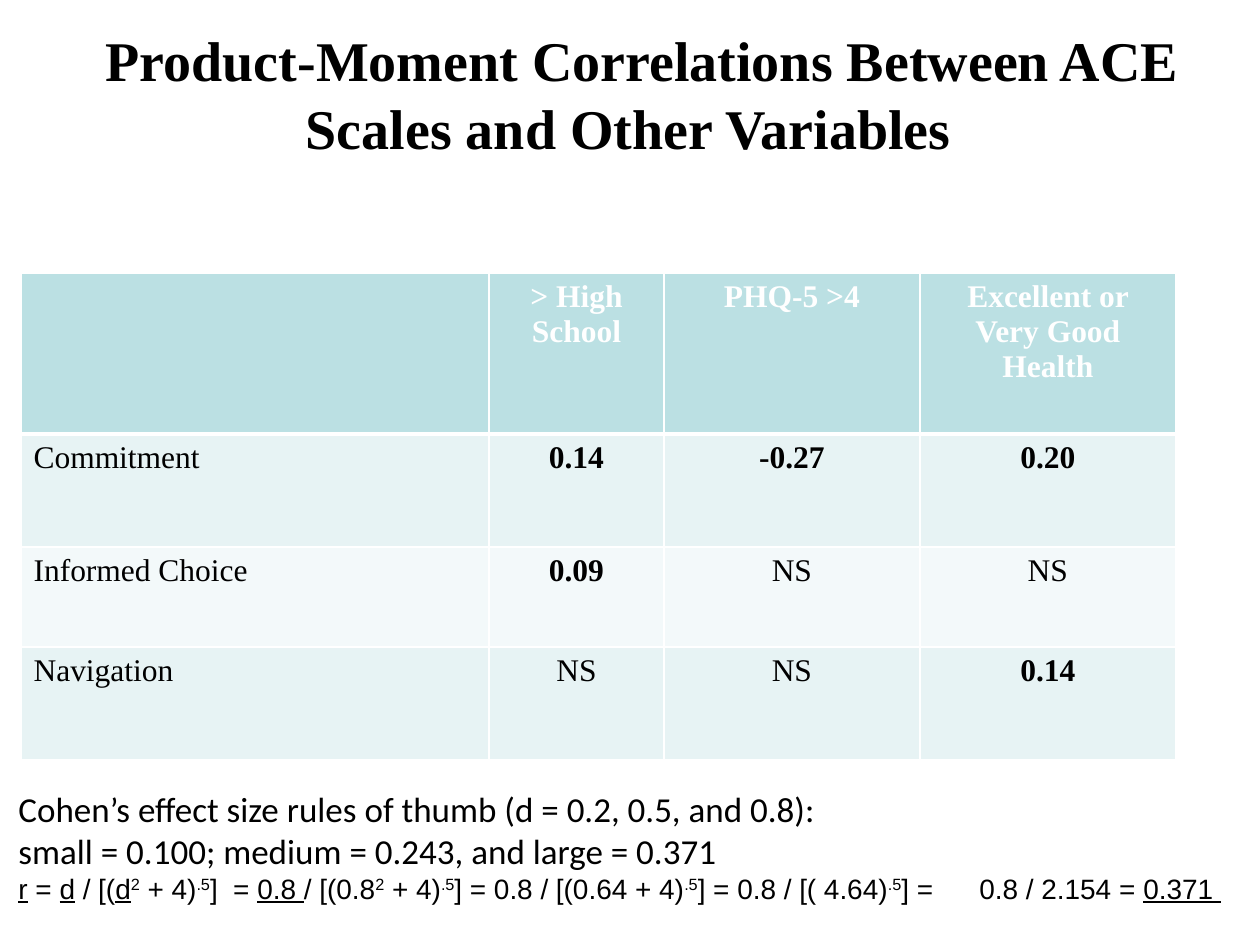
from dataclasses import dataclass

from lxml import etree
from pptx import Presentation
from pptx.dml.color import RGBColor
from pptx.enum.text import MSO_ANCHOR, PP_ALIGN
from pptx.oxml.ns import qn
from pptx.util import Emu, Pt

PX_PER_INCH = 126
LEFT, CENTER = PP_ALIGN.LEFT, PP_ALIGN.CENTER
TOP = MSO_ANCHOR.TOP
SERIF, SANS, BODY = "Times New Roman", "Arial", "Calibri"
COLORS = {
    "text": "000000",
    "white": "FFFFFF",
    "header": "BBE0E3",
    "band_dark": "E7F3F4",
    "band_light": "F3F9FA",
}


@dataclass
class Span:
    text: str
    underline: bool = False
    raised: bool = False


@dataclass
class Line:
    spans: list[Span]
    font: str
    size: int
    bold: bool = False
    align: PP_ALIGN = LEFT
    color: str = "text"
    tab: int = 0


@dataclass
class Box:
    x: int
    y: int
    w: int
    h: int
    inset_y: int
    lines: list[Line]


def px(n: int) -> Emu:
    return Emu(round(n * 914400 / PX_PER_INCH))


def rgb(name: str) -> RGBColor:
    return RGBColor.from_string(COLORS[name])


def write_line(p, line: Line) -> None:
    p.alignment = line.align
    p.font.name, p.font.size, p.font.bold = line.font, Pt(line.size), line.bold
    p.font.color.rgb = rgb(line.color)
    if line.tab:
        tabs = etree.Element(qn("a:tabLst"))
        etree.SubElement(tabs, qn("a:tab"), pos=str(px(line.tab)), algn="l")
        p._p.pPr.insert(0, tabs)
    for span in line.spans:
        r = p.add_run()
        r.text = span.text
        if span.underline:
            r.font.underline = True
        if span.raised:
            r._r.get_or_add_rPr().set("baseline", "30000")


def draw_box(slide, box: Box) -> None:
    sp = slide.shapes.add_textbox(px(box.x), px(box.y), px(box.w), px(box.h))
    tf = sp.text_frame
    tf.word_wrap = True
    tf.vertical_anchor = TOP
    tf.margin_top = tf.margin_bottom = px(box.inset_y)
    for i, line in enumerate(box.lines):
        write_line(tf.add_paragraph() if i else tf.paragraphs[0], line)


def set_border(cell, side: str, points: int) -> None:
    ln = etree.SubElement(cell._tc.get_or_add_tcPr(), qn(f"a:{side}"), w=str(Pt(points)))
    fill = etree.SubElement(ln, qn("a:solidFill"))
    etree.SubElement(fill, qn("a:srgbClr"), val=COLORS["white"])


def draw_table(slide, x: int, y: int, cols: list[int], heights: list[int],
               rows: list[list[str]]) -> None:
    table = slide.shapes.add_table(len(rows), len(cols), px(x), px(y),
                                   px(sum(cols)), px(sum(heights))).table
    table.horz_banding = False
    for column, width in zip(table.columns, cols):
        column.width = px(width)
    for i, (values, height) in enumerate(zip(rows, heights)):
        table.rows[i].height = px(height)
        is_header = i == 0
        band = "header" if is_header else "band_dark" if i % 2 else "band_light"
        for j, value in enumerate(values):
            cell = table.cell(i, j)
            # Significant correlations are bold
            bold = is_header or (j > 0 and value != "NS")
            write_line(cell.text_frame.paragraphs[0],
                       Line([Span(value)] if value else [], SERIF, 18, bold,
                            CENTER if j else LEFT, "white" if is_header else "text"))
            for side in ("lnL", "lnR", "lnT", "lnB"):
                thick = (is_header and side == "lnB") or (i == 1 and side == "lnT")
                set_border(cell, side, 3 if thick else 1)
            cell.fill.solid()
            cell.fill.fore_color.rgb = rgb(band)


TITLE = Box(21, 20, 1229, 149, 6, [
    Line([Span(" Product-Moment Correlations Between ACE Scales and Other Variables ")],
         SERIF, 32, True, CENTER),
])

CORRELATIONS = [
    ["", "> High School", "PHQ-5 >4", "Excellent or Very Good Health"],
    ["Commitment", "0.14", "-0.27", "0.20"],
    ["Informed Choice", "0.09", "NS", "NS"],
    ["Navigation", "NS", "NS", "0.14"],
]

SQUARED = Span("2", raised=True)
ROOT = Span(".5", raised=True)
FORMULA = [
    Span("r", underline=True), Span(" = "),
    Span("d", underline=True), Span(" / [("),
    Span("d", underline=True), SQUARED, Span(" + 4)"), ROOT, Span("]  = "),
    Span("0.8 ", underline=True), Span("/ [(0.8"), SQUARED, Span(" + 4)"), ROOT,
    Span("] = 0.8 / [(0.64 + 4)"), ROOT,
    Span("] = 0.8 / [( 4.64)"), ROOT,
    Span("] =\t0.8 / 2.154 = "), Span("0.371 ", underline=True),
]
EFFECT_SIZES = Box(6, 787, 1254, 122, 0, [
    Line([Span("Cohen’s effect size rules of thumb (d = 0.2, 0.5, and 0.8):")], BODY, 20),
    Line([Span("small = 0.100; medium = 0.243, and large = 0.371")], BODY, 20),
    Line(FORMULA, SANS, 16, tab=961),
])


def main() -> None:
    prs = Presentation()
    prs.slide_width, prs.slide_height = px(1260), px(945)
    slide = prs.slides.add_slide(prs.slide_layouts[6])

    # Effect size notes below the table
    draw_box(slide, EFFECT_SIZES)
    # Correlation table
    draw_table(slide, 21, 273, [468, 175, 256, 256], [161, 113, 100, 113], CORRELATIONS)
    # Heading
    draw_box(slide, TITLE)

    prs.save("out.pptx")


if __name__ == "__main__":
    main()
